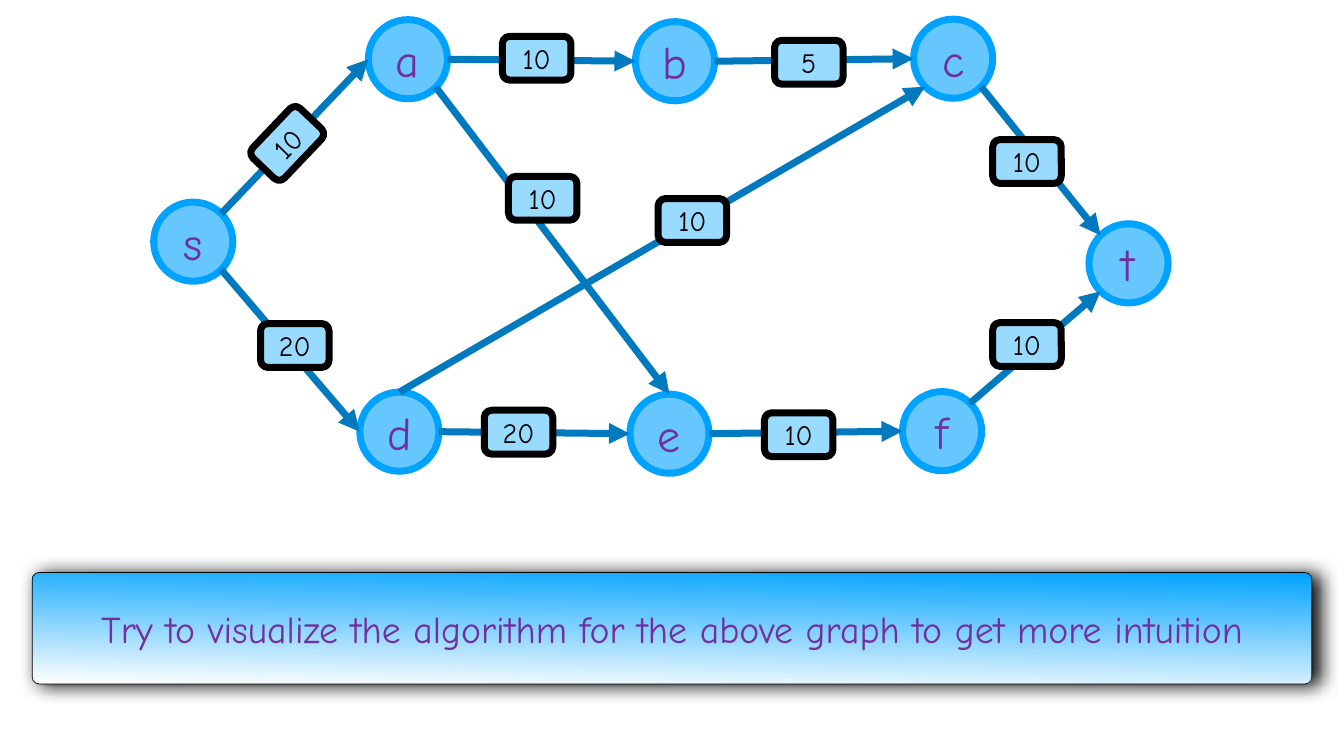
from math import cos, radians, sin

from lxml.etree import SubElement
from pptx import Presentation
from pptx.dml.color import RGBColor
from pptx.enum.shapes import MSO_CONNECTOR as Connector, MSO_SHAPE as Shape
from pptx.enum.text import MSO_ANCHOR as Anchor, MSO_AUTO_SIZE as AutoSize, PP_ALIGN as Align
from pptx.oxml.ns import qn
from pptx.util import Inches, Pt

PX = Inches(1) // 100
NODE_SIZE = 157
LABEL_SIZE = (136, 87)
TOP, TOP_LEFT, LEFT, BOTTOM_LEFT, BOTTOM, BOTTOM_RIGHT, RIGHT, TOP_RIGHT = range(8)

NODES = {
    "s": (305, 401), "a": (731, 39), "b": (1261, 43), "c": (1813, 38),
    "d": (714, 778), "e": (1250, 782), "f": (1791, 777), "t": (2161, 444),
}
EDGES = [
    ("s", TOP_RIGHT, "a", LEFT), ("s", BOTTOM_RIGHT, "d", LEFT),
    ("a", RIGHT, "b", LEFT), ("b", RIGHT, "c", LEFT),
    ("a", BOTTOM_RIGHT, "e", TOP), ("d", TOP, "c", BOTTOM_LEFT),
    ("d", RIGHT, "e", LEFT), ("e", RIGHT, "f", LEFT),
    ("c", BOTTOM_RIGHT, "t", TOP_LEFT), ("f", TOP_RIGHT, "t", BOTTOM_LEFT),
]
CAPACITIES = [
    ("10", 502, 241, 313.6), ("20", 517, 642, 0),
    ("10", 997, 72, 0), ("5", 1537, 80, 0),
    ("10", 1009, 350, 0), ("10", 1306, 394, 0),
    ("20", 961, 814, 0), ("10", 1517, 819, 0),
    ("10", 1970, 277, 0), ("10", 1970, 640, 0),
]


def color(value):
    """Turn a hex string into a colour."""
    return RGBColor.from_string(value)


def write(shape, text, *, size, ink, font="Comic Neue", auto_size=AutoSize.NONE):
    """Put one centred, formatted line of text into a shape."""
    frame = shape.text_frame
    frame.word_wrap = True
    frame.auto_size = auto_size
    frame.vertical_anchor = Anchor.MIDDLE
    frame.margin_left = frame.margin_right = 6 * PX
    frame.margin_top = frame.margin_bottom = 6 * PX
    paragraph = frame.paragraphs[0]
    paragraph.alignment = Align.CENTER
    run = paragraph.add_run()
    run.text = text
    run.font.name = font
    run.font.size = Pt(size)
    run.font.color.rgb = color(ink)


class GraphSlide:
    """Hold the graph style and the slide being drawn."""

    purple, black = "7030A0", "000000"
    node_fill, node_line = "66C7FF", "00A2FF"
    label_fill, edge_line = "99DAFF", "0079BF"
    stroke = 10

    def __init__(self, slide):
        """Start with an empty slide."""
        self.slide = slide
        self.nodes = {}

    def box(self, kind, left, top, width, height, line, stroke):
        """Add an outlined preset shape without a shadow."""
        shape = self.slide.shapes.add_shape(
            kind, left * PX, top * PX, width * PX, height * PX)
        shape.shadow.inherit = False
        shape.line.color.rgb = color(line)
        shape.line.width = Pt(stroke)
        return shape

    def node(self, name, left, top):
        """Add a named round node."""
        shape = self.box(Shape.OVAL, left, top, NODE_SIZE, NODE_SIZE,
                         self.node_line, self.stroke)
        shape.fill.solid()
        shape.fill.fore_color.rgb = color(self.node_fill)
        write(shape, name, size=66, ink=self.purple, auto_size=AutoSize.SHAPE_TO_FIT_TEXT)
        self.nodes[name] = shape

    def site(self, name, index):
        """Return the point of one of a node's eight connection sites."""
        node = self.nodes[name]
        radius = node.width / 2
        angle = radians(90 + 45 * index)
        return (round(node.left + radius * (1 + cos(angle))),
                round(node.top + radius * (1 - sin(angle))))

    def edge(self, start, start_site, end, end_site):
        """Add an arrow glued to the sites of two nodes."""
        connector = self.slide.shapes.add_connector(
            Connector.STRAIGHT, *self.site(start, start_site), *self.site(end, end_site))
        connector.line.color.rgb = color(self.edge_line)
        connector.line.width = Pt(self.stroke)
        properties = connector.element.spPr
        SubElement(properties.find(qn("a:ln")), qn("a:tailEnd"), type="triangle")
        SubElement(properties, qn("a:effectLst"))
        glue = connector.element.find(".//" + qn("p:cNvCxnSpPr"))
        for tag, name, index in (("a:stCxn", start, start_site), ("a:endCxn", end, end_site)):
            SubElement(glue, qn(tag), id=str(self.nodes[name].shape_id), idx=str(index))

    def capacity(self, text, left, top, rotation):
        """Add the capacity label of an edge."""
        shape = self.box(Shape.ROUNDED_RECTANGLE, left, top, *LABEL_SIZE,
                         self.black, self.stroke)
        shape.rotation = rotation
        shape.fill.solid()
        shape.fill.fore_color.rgb = color(self.label_fill)
        write(shape, text, size=40, ink=self.black, auto_size=AutoSize.SHAPE_TO_FIT_TEXT)

    def banner(self, text, left, top, width, height):
        """Add a gradient banner with a soft shadow."""
        shape = self.box(Shape.ROUNDED_RECTANGLE, left, top, width, height, self.black, 1)
        shape.adjustments[0] = 0.06
        shape.fill.gradient()
        shape.fill.gradient_angle = 269
        for stop, value in zip(shape.fill.gradient_stops, (self.node_line, "FFFFFF")):
            stop.color.rgb = color(value)
        effects = shape.element.spPr.find(qn("a:effectLst"))
        shadow = SubElement(effects, qn("a:outerShdw"), blurRad=str(Pt(28)),
                            dist=str(Pt(9)), dir="0", rotWithShape="0")
        tint = SubElement(shadow, qn("a:srgbClr"), val=self.black)
        SubElement(tint, qn("a:alpha"), val="97000")
        write(shape, text, size=54, ink=self.purple)


def main():
    """Build the flow network slide."""
    presentation = Presentation()
    presentation.slide_width = 2667 * PX
    presentation.slide_height = 1500 * PX
    graph = GraphSlide(presentation.slides.add_slide(presentation.slide_layouts[6]))
    for name, position in NODES.items():
        graph.node(name, *position)
    for edge in EDGES:
        graph.edge(*edge)
    for capacity in CAPACITIES:
        graph.capacity(*capacity)
    graph.banner("Try to visualize the algorithm for the above graph to get more intuition",
                 64, 1136, 2539, 221)
    presentation.save("out.pptx")


if __name__ == "__main__":
    main()
